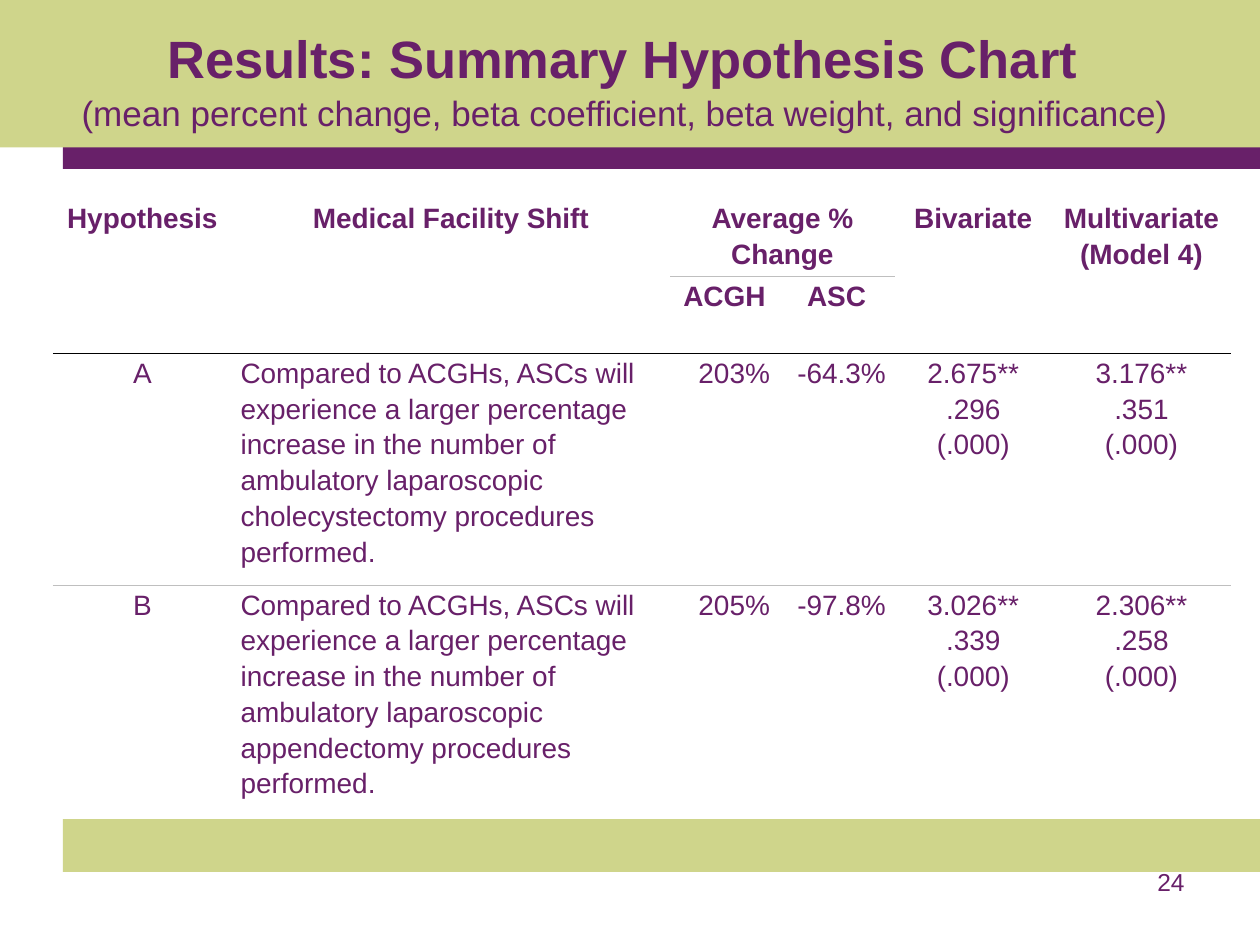
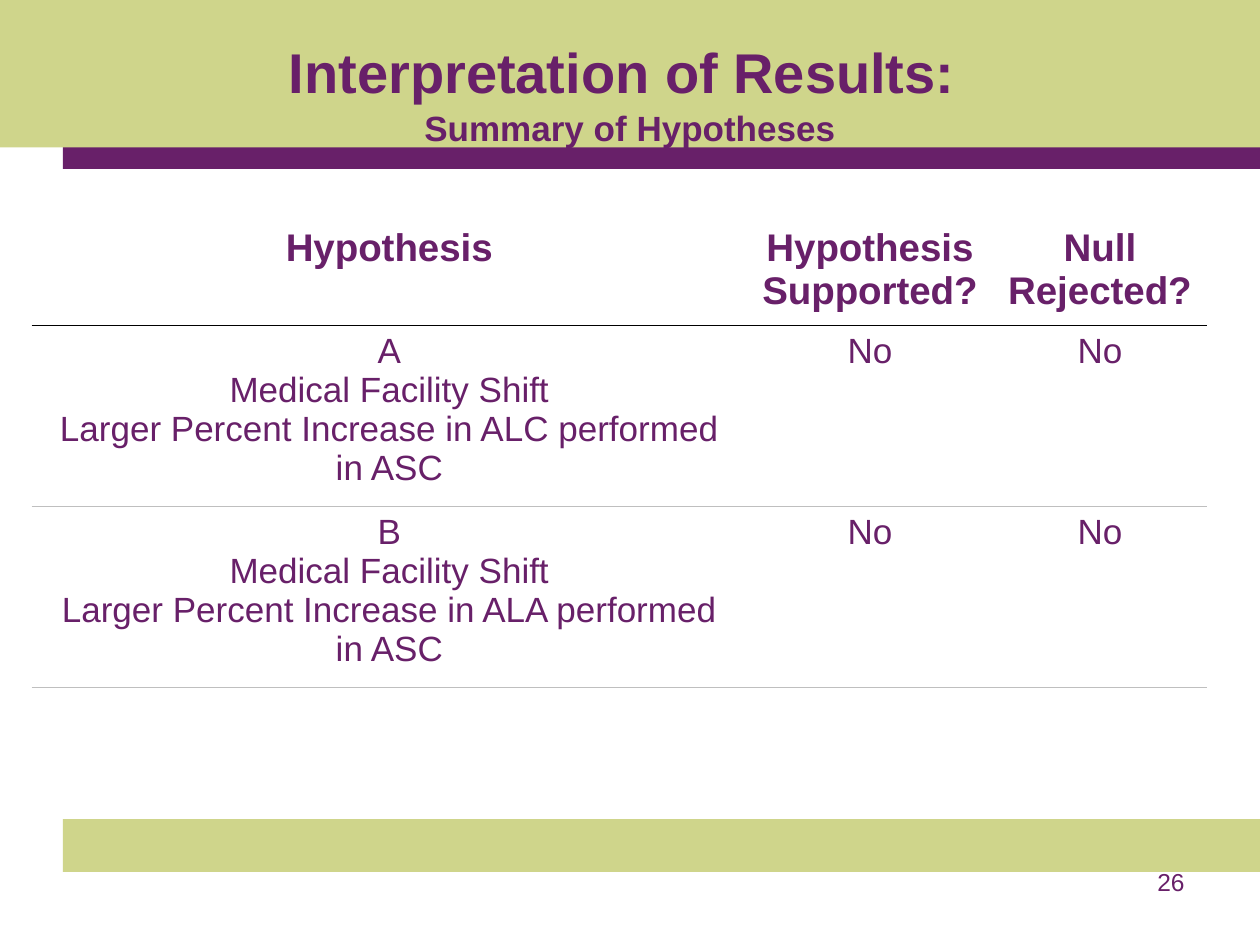
from lxml import etree
from pptx import Presentation
from pptx import util as u
from pptx.dml import color
from pptx.enum import shapes, text
from pptx.oxml import ns

GREEN = color.RGBColor(0xCF, 0xD5, 0x8B)
PLUM = color.RGBColor(0x68, 0x20, 0x69)
BLACK = color.RGBColor(0, 0, 0)
GRAY = color.RGBColor(0xBF, 0xBF, 0xBF)
LEFT, MID, RIGHT = text.PP_ALIGN.LEFT, text.PP_ALIGN.CENTER, text.PP_ALIGN.RIGHT

# Left, top, width, height and colour, from back to front
BANDS = [
    (0.5, 6.5, 9.5, 0.42, GREEN),
    (0.5, 0.92, 9.5, 0.42, PLUM),
    (0, 0, 10, 1.17, GREEN),
]

SHIFT = ("Compared to ACGHs, ASCs will experience a larger percentage increase in "
         "the number of ambulatory laparoscopic {} procedures performed.")
CLAIM = "{}\nMedical Facility Shift\nLarger Percent Increase in {} performed in ASC"

# None marks a cell covered by a merge
PAGES = [
    {
        "number": "24",
        "top": 0.21,
        "title": [
            ("Results: Summary Hypothesis Chart ", 30, True),
            ("(mean percent change, beta coefficient, beta weight, "
             "and significance) ", 20, False),
        ],
        "place": (0.42, 1.58),
        "cols": [1.42, 3.48, 0.86, 0.92, 1.25, 1.42],
        "rows": [0.57, 0.57, 1.7, 1.7],
        "inset": (0.07, 0),
        "heads": 2,
        "sizes": (16, 16),
        "space": 1.15,
        "aligns": [MID, LEFT, RIGHT, RIGHT, MID, MID],
        "rules": [BLACK, BLACK, GRAY, None],
        "merges": [(0, 0, 1, 0), (0, 1, 1, 1), (0, 2, 0, 3),
                   (0, 4, 1, 4), (0, 5, 1, 5)],
        "cells": [
            ["Hypothesis", "Medical Facility Shift", "Average % Change", None,
             "Bivariate", "Multivariate\n(Model 4)"],
            [None, None, "ACGH", "ASC", None, None],
            ["A", SHIFT.format("cholecystectomy"), "203%", "-64.3%",
             "2.675**\n.296\n(.000)", "3.176**\n.351\n(.000)"],
            ["B", SHIFT.format("appendectomy"), "205%", "-97.8%",
             "3.026**\n.339\n(.000)", "2.306**\n.258\n(.000)"],
        ],
    },
    {
        "number": "26",
        "top": 0.3,
        "title": [
            ("Interpretation of Results: ", 32, True),
            ("Summary of Hypotheses", 20, True),
        ],
        "place": (0.25, 1.75),
        "cols": [5.68, 1.95, 1.7],
        "rows": [0.78, 1.34, 1.34],
        "inset": (0.1, 0.05),
        "heads": 1,
        "sizes": (22, 20),
        "space": 1.0,
        "aligns": [MID, MID, MID],
        "rules": [BLACK, GRAY, GRAY],
        "merges": [],
        "cells": [
            ["Hypothesis", "Hypothesis Supported?", "Null Rejected?"],
            [CLAIM.format("A", "ALC"), "No", "No"],
            [CLAIM.format("B", "ALA"), "No", "No"],
        ],
    },
]


def write(para, words, size, bold=False, **form):
    """Fill a paragraph and set its font and paragraph format."""
    run = para.add_run()
    run.text = words
    for key, val in {"name": "Arial", "size": u.Pt(size), "bold": bold}.items():
        setattr(run.font, key, val)
    run.font.color.rgb = PLUM
    for key, val in form.items():
        setattr(para, key, val)


def edge(cell, side, tone):
    """Draw one cell border, or clear it when tone is None."""
    props = cell._tc.get_or_add_tcPr()
    line = etree.SubElement(props, ns.qn("a:ln" + side), w=str(u.Pt(0.25)))
    if tone is None:
        etree.SubElement(line, ns.qn("a:noFill"))
    else:
        fill = etree.SubElement(line, ns.qn("a:solidFill"))
        etree.SubElement(fill, ns.qn("a:srgbClr"), val=str(tone))


deck = Presentation()
deck.slide_width, deck.slide_height = u.Inches(10), u.Inches(7.5)

for page in PAGES:
    slide = deck.slides.add_slide(deck.slide_layouts[6])

    # Bands
    for *place, tone in BANDS:
        band = slide.shapes.add_shape(shapes.MSO_SHAPE.RECTANGLE, *map(u.Inches, place))
        band.shadow.inherit = False
        band.fill.solid()
        band.fill.fore_color.rgb = tone
        band.line.fill.background()

    # Title
    place = (0.5, page["top"], 9, 0.92)
    frame = slide.shapes.add_textbox(*map(u.Inches, place)).text_frame
    form = {"word_wrap": True, "margin_left": 0, "margin_right": 0,
            "margin_top": 0, "margin_bottom": 0}
    for key, val in form.items():
        setattr(frame, key, val)
    for i, (words, size, bold) in enumerate(page["title"]):
        para = frame.add_paragraph() if i else frame.paragraphs[0]
        write(para, words, size, bold, alignment=MID, space_before=u.Pt(i))

    # Page number
    place = (7.17, 6.83, 2.33, 0.52)
    frame = slide.shapes.add_textbox(*map(u.Inches, place)).text_frame
    frame.word_wrap = True
    write(frame.paragraphs[0], page["number"], 14, alignment=RIGHT)

    # Table grid
    cols, rows = page["cols"], page["rows"]
    place = (*page["place"], sum(cols), sum(rows))
    grid = slide.shapes.add_table(len(rows), len(cols), *map(u.Inches, place)).table
    grid.first_row = grid.horz_banding = False
    for col, wide in zip(grid.columns, cols):
        col.width = u.Inches(wide)
    for row, high in zip(grid.rows, rows):
        row.height = u.Inches(high)
    for r, c, low, far in page["merges"]:
        grid.cell(r, c).merge(grid.cell(low, far))

    # Rule below each row; a heading over two columns has a gray one
    under = [[tone] * len(cols) for tone in page["rules"]]
    for r, c, low, far in page["merges"]:
        if far > c:
            under[low][c:far + 1] = [GRAY] * (far + 1 - c)

    # Table cells
    wide, high = map(u.Inches, page["inset"])
    form = {"margin_left": wide, "margin_right": wide,
            "margin_top": high, "margin_bottom": high}
    for r, line in enumerate(page["cells"]):
        head = r < page["heads"]
        for c, words in enumerate(line):
            cell = grid.cell(r, c)
            for key, val in form.items():
                setattr(cell, key, val)
            above = under[r - 1][c] if r else None
            for side, tone in zip("LRTB", (None, None, above, under[r][c])):
                edge(cell, side, tone)
            cell.fill.background()
            if words is None:
                continue
            for i, part in enumerate(words.split("\n")):
                frame = cell.text_frame
                para = frame.add_paragraph() if i else frame.paragraphs[0]
                write(para, part, page["sizes"][0 if head else 1], head,
                      alignment=MID if head else page["aligns"][c],
                      line_spacing=page["space"])

deck.save("out.pptx")
